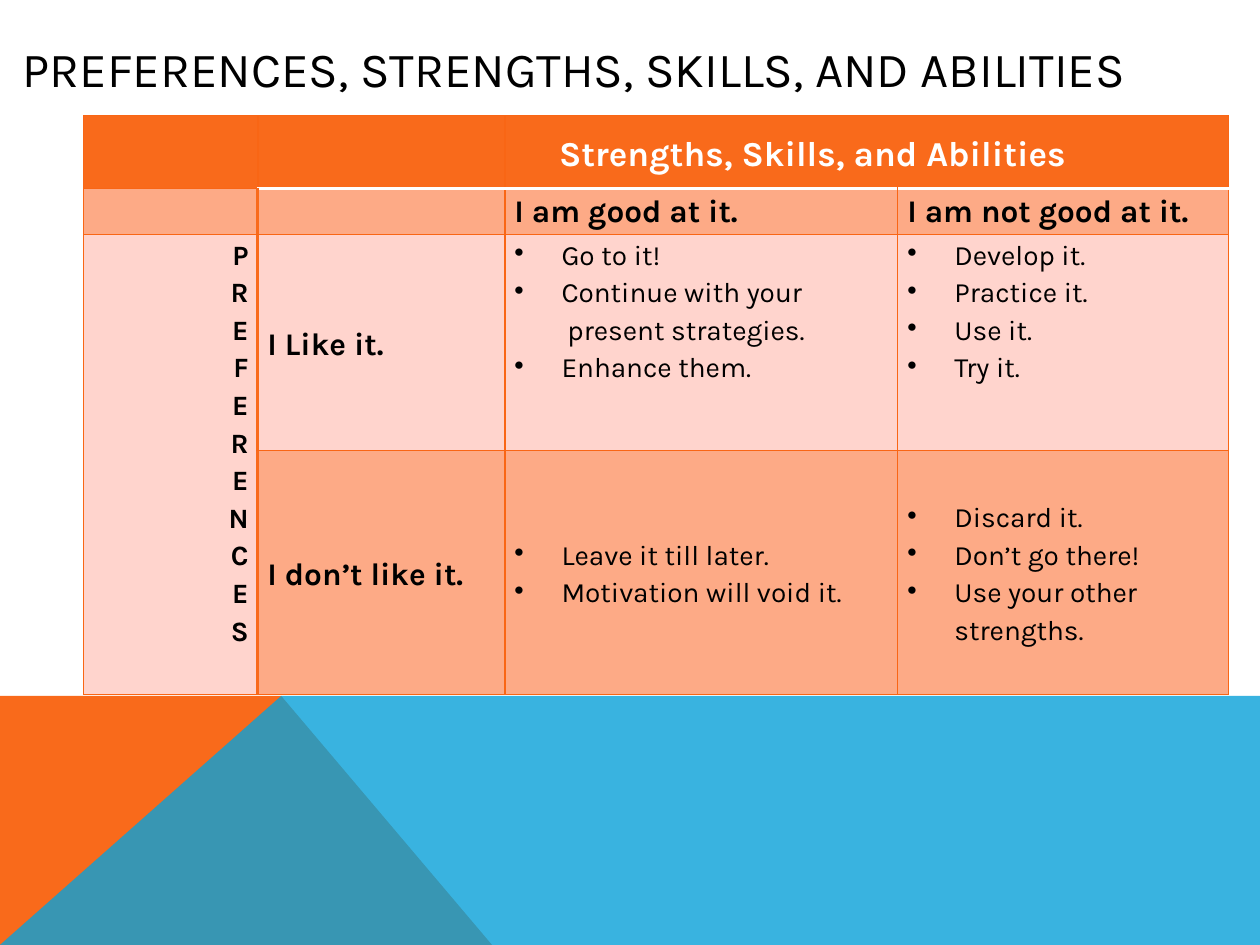
from lxml.etree import SubElement
from pptx import Presentation
from pptx.dml.color import RGBColor
from pptx.enum.text import MSO_ANCHOR, MSO_AUTO_SIZE, PP_ALIGN
from pptx.oxml import parse_xml
from pptx.oxml.ns import nsdecls, qn
from pptx.util import Cm, Pt

COLORS = {"orange": "F96A1B", "grid": "F96615", "blue": "08A1D9", "pale": "FFD4CD",
          "peach": "FDAA86", "white": "FFFFFF", "black": "000000"}


class Deck:
    font = "Karla"
    line_spacing = 1.15
    bullet_indent = 0.95
    cell_margin = 0.19

    def __init__(self, width, height):
        self.prs = Presentation()
        self.prs.slide_width, self.prs.slide_height = Cm(width), Cm(height)
        self.slide = self.prs.slides.add_slide(self.prs.slide_layouts[5])

    def run(self, p, text, size, color="black", bold=False):
        r = p.add_run()
        r.text = text
        r.font.name, r.font.size, r.font.bold = self.font, Pt(size), bold
        r.font.color.rgb = RGBColor.from_string(COLORS[color])

    def title(self, text, left, top, width, height):
        sp = self.slide.shapes.title
        sp.left, sp.top, sp.width, sp.height = map(Cm, (left, top, width, height))
        tf = sp.text_frame
        tf.auto_size = MSO_AUTO_SIZE.NONE
        tf.word_wrap = True
        tf.vertical_anchor = MSO_ANCHOR.MIDDLE
        tf.paragraphs[0].alignment = PP_ALIGN.LEFT
        self.run(tf.paragraphs[0], text, 28)

    def polygon(self, points, color, opacity=100):
        points = [(Cm(x), Cm(y)) for x, y in points]
        builder = self.slide.shapes.build_freeform(*points[0])
        builder.add_line_segments(points[1:], close=True)
        sp = builder.convert_to_shape()
        sp.shadow.inherit = False
        sp.line.fill.background()
        sp.fill.solid()
        sp.fill.fore_color.rgb = RGBColor.from_string(COLORS[color])
        if opacity < 100:
            clr = sp.fill._xPr.find(qn("a:solidFill"))[0]
            SubElement(clr, qn("a:alpha"), val=str(opacity * 1000))

    def table(self, left, top, cols, rows):
        frame = self.slide.shapes.add_table(len(rows), len(cols), Cm(left), Cm(top),
                                            Cm(sum(cols)), Cm(sum(rows)))
        tbl = frame.table
        for col, width in zip(tbl.columns, cols):
            col.width = Cm(width)
        for row, height in zip(tbl.rows, rows):
            row.height = Cm(height)
        return tbl

    def cell_style(self, cell, fill, borders):
        cell.margin_left = cell.margin_right = Cm(self.cell_margin)
        cell.margin_top = cell.margin_bottom = 0
        cell.fill.solid()
        cell.fill.fore_color.rgb = RGBColor.from_string(COLORS[fill])
        tcPr = cell._tc.get_or_add_tcPr()
        for i, side in enumerate("LRTB"):
            color, width = borders.get(side, ("grid", 0.75))
            tcPr.insert(i, parse_xml(
                f'<a:ln{side} {nsdecls("a")} w="{Pt(width)}"><a:solidFill>'
                f'<a:srgbClr val="{COLORS[color]}"/></a:solidFill></a:ln{side}>'))

    def cell_text(self, cell, lines, size, color="black", bold=False, middle=False,
                  align=PP_ALIGN.LEFT, indent=0, bullets=False):
        cell.vertical_anchor = MSO_ANCHOR.MIDDLE if middle else MSO_ANCHOR.TOP
        tf = cell.text_frame
        for i, line in enumerate(lines):
            p = tf.add_paragraph() if i else tf.paragraphs[0]
            p.alignment, p.line_spacing = align, self.line_spacing
            pPr = p._p.get_or_add_pPr()
            if bullets and line not in CONTINUATIONS:
                pPr.set("marL", str(Cm(self.bullet_indent)))
                pPr.set("indent", str(-Cm(self.bullet_indent)))
                SubElement(pPr, qn("a:buChar"), char="•")
            else:
                pPr.set("marL", str(Cm(CONTINUATIONS.get(line, indent))))
            self.run(p, line, size, color, bold)


CONTINUATIONS = {"present strategies.": 1.07}
HEADINGS = {
    (1, 2): "I am good at it.",
    (1, 3): "I am not good at it.",
    (2, 1): "I Like it.",
    (3, 1): "I don’t like it.",
}
ADVICE = {
    (2, 2): ["Go to it!", "Continue with your", "present strategies.", "Enhance them."],
    (2, 3): ["Develop it.", "Practice it.", "Use it.", "Try it."],
    (3, 2): ["Leave it till later.", "Motivation will void it."],
    (3, 3): ["Discard it.", "Don’t go there!", "Use your other strengths."],
}


def cell_look(row, col):
    borders = {}
    if col and row < 2:
        borders["T" if row else "B"] = ("white", 2)
    if row and col < 2:
        borders["L" if col else "R"] = ("orange", 2)
    if row == 0:
        fill = "orange"
    elif row == 2 or (row == 3 and col == 0):
        fill = "pale"
    else:
        fill = "peach"
    return fill, borders


def main():
    width, height = 25.4, 19.05
    band_top, peak = 14.03, 5.67
    deck = Deck(width, height)
    deck.polygon([(0, height), (0, band_top), (peak, band_top), (9.92, height)], "orange")
    deck.polygon([(0, height), (peak, band_top), (width, band_top), (width, height)],
                 "blue", 80)
    deck.title("PREFERENCES, STRENGTHS, SKILLS, AND ABILITIES", 0.2, 0, 24.33, 2.75)

    tbl = deck.table(1.69, 2.33, [3.51, 4.98, 7.92, 6.67], [1.47, 0.93, 4.35, 4.92])
    for row in range(4):
        for col in range(4):
            deck.cell_style(tbl.cell(row, col), *cell_look(row, col))
    tbl.cell(0, 2).merge(tbl.cell(0, 3))
    tbl.cell(2, 0).merge(tbl.cell(3, 0))

    deck.cell_text(tbl.cell(0, 2), ["Strengths, Skills, and Abilities"], 20, "white",
                   bold=True, middle=True, indent=0.9)
    deck.cell_text(tbl.cell(2, 0), "PREFERENCES", 16, bold=True, align=PP_ALIGN.RIGHT)
    for (row, col), text in HEADINGS.items():
        deck.cell_text(tbl.cell(row, col), [text], 18, bold=True, middle=row > 1)
    for (row, col), lines in ADVICE.items():
        deck.cell_text(tbl.cell(row, col), lines, 16, middle=row == 3, bullets=True)

    deck.prs.save("out.pptx")


if __name__ == "__main__":
    main()
